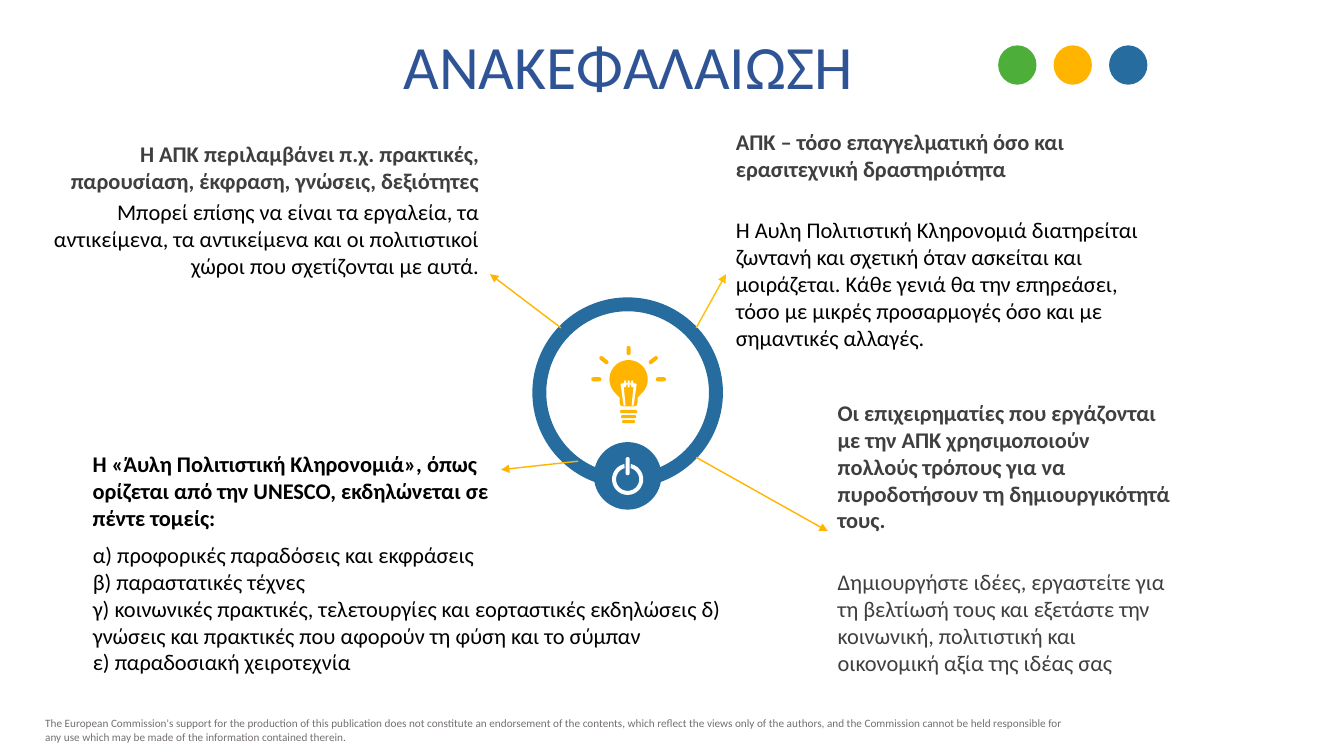
from math import atan2, cos, pi, radians, sin

from lxml.etree import SubElement
from pptx import Presentation
from pptx.dml.color import RGBColor
from pptx.enum.shapes import MSO_CONNECTOR as Connector, MSO_SHAPE as Preset
from pptx.enum.text import MSO_ANCHOR as Anchor, MSO_AUTO_SIZE as AutoSize, PP_ALIGN as Align
from pptx.oxml.ns import qn
from pptx.util import Inches, Pt

COLORS = {
    "title": "2F5496", "blue": "266C9F", "yellow": "FFB500", "gold": "FFC000",
    "green": "4EAE3A", "white": "FFFFFF", "black": "000000", "gray": "3F3F3F",
    "footer": "757070",
}
FONT = "Calibri"

TITLE_BOX = (2.87, 0.31, 6.73, 0.79)
DOTS_BOX = (9.9, 0.45, 1.48, 0.39)
RING_BOX = (5.28, 2.95, 1.89, 1.89)
FOOTER_BOX = (0.35, 7.06, 10.46, 0.37)

# box, heading width and height, text height, alignment, heading and text colours, heading, text
NOTES = [
    ((0.2, 1.24, 4.65, 1.71), (4.65, 0.83), 1.17, Align.RIGHT, "gray", "black",
     "Η ΑΠΚ περιλαμβάνει π.χ. πρακτικές, παρουσίαση, έκφραση, γνώσεις, δεξιότητες",
     ["Μπορεί επίσης να είναι τα εργαλεία, τα αντικείμενα, τα αντικείμενα και οι "
      "πολιτιστικοί χώροι που σχετίζονται με αυτά."]),
    ((7.2, 1.22, 4.29, 2.32), (3.97, 0.64), 1.45, Align.LEFT, "gray", "black",
     "ΑΠΚ – τόσο επαγγελματική όσο και ερασιτεχνική δραστηριότητα",
     ["Η Άυλη Πολιτιστική Κληρονομιά διατηρείται ζωντανή και σχετική όταν ασκείται και "
      "μοιράζεται. Κάθε γενιά θα την επηρεάσει, τόσο με μικρές προσαρμογές όσο και με "
      "σημαντικές αλλαγές."]),
    ((8.21, 3.9, 3.5, 2.86), (3.5, 1.45), 1.18, Align.LEFT, "gray", "gray",
     "Οι επιχειρηματίες που εργάζονται με την ΑΠΚ χρησιμοποιούν πολλούς τρόπους για να "
     "πυροδοτήσουν τη δημιουργικότητά τους.",
     ["Δημιουργήστε ιδέες, εργαστείτε για τη βελτίωσή τους και εξετάστε την κοινωνική, "
      "πολιτιστική και οικονομική αξία της ιδέας σας"]),
    ((0.82, 4.36, 6.45, 2.4), (4.43, 1.01), 1.45, Align.LEFT, "black", "black",
     "Η «Άυλη Πολιτιστική Κληρονομιά», όπως ορίζεται από την UNESCO, εκδηλώνεται σε "
     "πέντε τομείς:",
     ["α) προφορικές παραδόσεις και εκφράσεις",
      "β) παραστατικές τέχνες",
      "γ) κοινωνικές πρακτικές, τελετουργίες και εορταστικές εκδηλώσεις δ) γνώσεις και "
      "πρακτικές που αφορούν τη φύση και το σύμπαν",
      "ε) παραδοσιακή χειροτεχνία"]),
]
# start as shares of the ring's box, end in inches, colour
ARROWS = [
    ((0.15, 0.16), (4.86, 2.72), "yellow"),
    ((0.86, 0.16), (7.2, 2.72), "gold"),
    ((0.86, 0.84), (8.21, 5.27), "yellow"),
    ((0.24, 0.86), (4.97, 4.66), "yellow"),
]
FOOTER = ("The European Commission's support for the production of this publication does not "
          "constitute an endorsement of the contents, which reflect the views only of the "
          "authors, and the Commission cannot be held responsible for any use which may be "
          "made of the information contained therein.")


def rgb(color):
    return RGBColor.from_string(COLORS[color])


def paint(shape, color):
    shape.shadow.inherit = False
    shape.fill.solid()
    shape.fill.fore_color.rgb = rgb(color)
    shape.line.fill.background()


def write(holder, box, lines, color, size=16, bold=False, align=Align.LEFT,
          anchor=Anchor.MIDDLE, spacing=1.0):
    for side, length in zip(("left", "top", "width", "height"), box):
        setattr(holder, side, Inches(length))
    frame = holder.text_frame
    frame.text = "\n".join(lines)
    for name, value in {"word_wrap": True, "auto_size": AutoSize.NONE,
                        "vertical_anchor": anchor}.items():
        setattr(frame, name, value)
    layout = {"alignment": align, "line_spacing": spacing, "space_before": Pt(0)}
    style = {"name": FONT, "size": Pt(size), "bold": bold}
    for paragraph in frame.paragraphs:
        if holder.is_placeholder:
            properties = paragraph._p.get_or_add_pPr()
            properties.set("marL", "0")
            properties.set("indent", "0")
            SubElement(properties, qn("a:buNone"))
        for name, value in layout.items():
            setattr(paragraph, name, value)
        for name, value in style.items():
            setattr(paragraph.runs[0].font, name, value)
        paragraph.runs[0].font.color.rgb = rgb(color)


def text_box(slide):
    return slide.shapes.add_textbox(0, 0, Inches(1), Inches(1))


def add_note(slide, note):
    """Heading at the top of the box, text at its bottom."""
    (left, top, width, height), heading_size, text_height, align, dark, plain, heading, lines = note
    text = slide.placeholders[1] if len(lines) > 1 else text_box(slide)
    write(text, (left, top + height - text_height, width, text_height), lines, plain, align=align)
    write(text_box(slide), (left, top, *heading_size), [heading], dark, bold=True, align=align)


def add_oval(slide, box, color, preset=Preset.OVAL):
    oval = slide.shapes.add_shape(preset, *map(Inches, box))
    paint(oval, color)
    return oval


def add_dots(slide, box):
    left, top, width, height = box
    dot = 0.38
    step = (width - dot) / 2
    for place, color in enumerate(("green", "yellow", "blue")):
        add_oval(slide, (left + place * step, top, dot, height), color)


def arc(x, y, radius, start, end, steps=24):
    angles = [radians(start + (end - start) * i / steps) for i in range(steps + 1)]
    return [(x + radius * cos(a), y + radius * sin(a)) for a in angles]


def capsule(x1, y1, x2, y2, thickness=0.04):
    turn = atan2(y2 - y1, x2 - x1) * 180 / pi
    return (arc(x2, y2, thickness / 2, turn - 90, turn + 90, 8)
            + arc(x1, y1, thickness / 2, turn + 90, turn + 270, 8))


def mirrored(half):
    return half + [(-x, y) for x, y in reversed(half)]


def add_outline(slide, center, contours, color):
    """One freeform whose contours are offsets in inches from the center."""
    placed = [[(Inches(center[0] + x), Inches(center[1] + y)) for x, y in contour]
              for contour in contours]
    builder = slide.shapes.build_freeform(*placed[0][0], scale=1.0)
    for contour in placed:
        builder.move_to(*contour[0])
        builder.add_line_segments(contour[1:], close=True)
    paint(builder.convert_to_shape(), color)


def add_bulb(slide, center):
    glass = mirrored(arc(0, 0, 0.19, -90, 45)
                     + [(0.09, 0.18), (0.09, 0.23), (0.08, 0.26), (0.05, 0.27)])
    filament = mirrored([
        (0, 0.01), (0.01, 0.02), (0.01, 0.04), (0.02, 0.04), (0.03, 0.01), (0.04, 0.01),
        (0.05, 0.04), (0.07, 0.04), (0.08, 0.05), (0.05, 0.26), (0.03, 0.26), (0.05, 0.06),
        (0.04, 0.08), (0.03, 0.08), (0.02, 0.05), (0.01, 0.05), (0.01, 0.08), (0, 0.08)])
    base = [capsule(-half, y, half, y, 0.03)
            for half, y in ((0.07, 0.32), (0.06, 0.37), (0.05, 0.42))]
    rays = [capsule(0, -0.31, 0, -0.26)]
    for side in (-1, 1):
        rays += [capsule(side * 0.29, 0, side * 0.35, 0),
                 capsule(side * 0.22, -0.17, side * 0.27, -0.21)]
    add_outline(slide, center, [glass, *base, *rays], "yellow")
    add_outline(slide, center, [filament], "white")


def add_power_button(slide, box):
    left, top, width, height = box
    add_oval(slide, box, "blue")
    ring = arc(0, 0, 0.155, -78, 258) + arc(0, 0, 0.115, 255, -75)
    add_outline(slide, (left + width / 2, top + height * 0.55),
                [ring, capsule(0, -0.2, 0, -0.06)], "white")


def add_hub(slide, box):
    left, top, width, height = box
    add_oval(slide, box, "blue", Preset.DONUT).adjustments[0] = 0.073
    middle = left + width / 2
    button = 0.67
    add_power_button(slide, (middle - button / 2, top + height * 0.76, button, button))
    add_bulb(slide, (middle + 0.01, top + height * 0.43))
    for (across, down), end, color in ARROWS:
        start = (left + across * width, top + down * height)
        arrow = slide.shapes.add_connector(Connector.STRAIGHT, *map(Inches, start + end))
        arrow.line.color.rgb = rgb(color)
        arrow.line.width = Pt(1)
        SubElement(arrow.line._get_or_add_ln(), qn("a:tailEnd"), type="triangle")
        SubElement(arrow._element.spPr, qn("a:effectLst"))


def main():
    deck = Presentation()
    deck.slide_width, deck.slide_height = Inches(13.33), Inches(7.5)
    slide = deck.slides.add_slide(deck.slide_layouts[1])
    write(slide.shapes.title, TITLE_BOX, ["ΑΝΑΚΕΦΑΛΑΙΩΣΗ"], "title", size=44,
          align=Align.CENTER, anchor=Anchor.TOP, spacing=0.9)
    add_hub(slide, RING_BOX)
    for note in NOTES:
        add_note(slide, note)
    add_dots(slide, DOTS_BOX)
    write(text_box(slide), FOOTER_BOX, [FOOTER], "footer", size=8, anchor=Anchor.TOP)
    deck.save("out.pptx")


if __name__ == "__main__":
    main()
